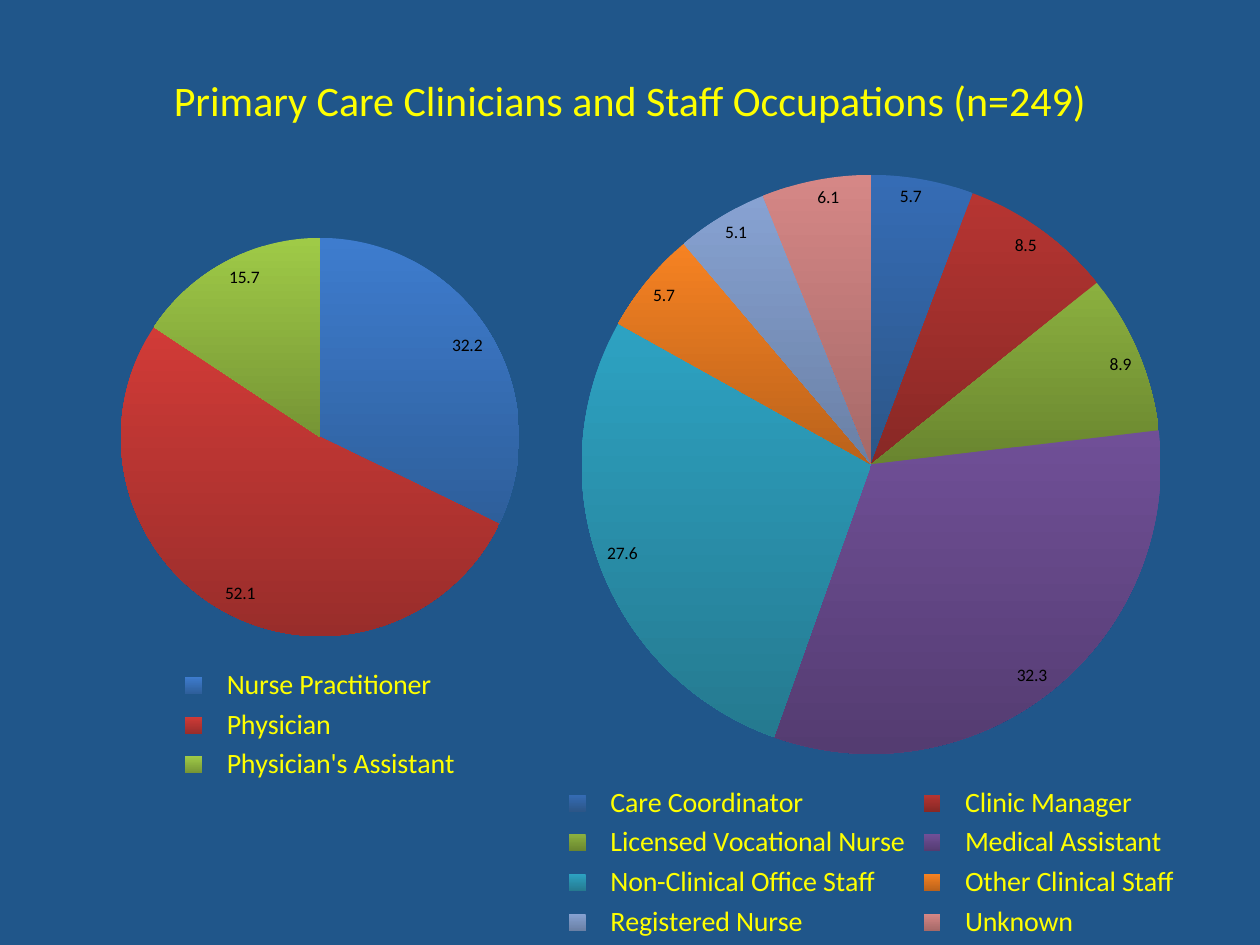
from pptx import Presentation
from pptx.chart.data import CategoryChartData
from pptx.dml.color import RGBColor
from pptx.enum import chart as charts, text
from pptx.util import Inches, Pt

FONT = "Calibri"
COLORS = {"background": "20568A", "accent": "FFFF00", "label": "000000"}
TITLE = "Primary Care Clinicians and Staff Occupations (n=249)"
LEGEND_GAP = " " * 3

PIES = [
    {
        "box": (0.5, 1.75, 4.08, 4.5),
        "slices": [
            ("Nurse Practitioner", 32.2, "3E7CCE", "2E5F9B"),
            ("Physician", 52.1, "D13B37", "992D2B"),
            ("Physician's Assistant", 15.7, "9FCA47", "769535"),
        ],
    },
    {
        "box": (4, 1.25, 5.83, 6.25),
        "slices": [
            ("Care Coordinator", 5.7, "356CB5", "2C5688"),
            ("Clinic Manager", 8.5, "B63532", "882825"),
            ("Licensed Vocational Nurse", 8.9, "8BB03F", "69852F"),
            ("Medical Assistant", 32.3, "704F97", "543C71"),
            ("Non-Clinical Office Staff", 27.6, "2DA2C2", "257A90"),
            ("Other Clinical Staff", 5.7, "F68222", "BA621B"),
            ("Registered Nurse", 5.1, "87A2D2", "6A80A5"),
            ("Unknown", 6.1, "D58786", "A66968"),
        ],
    },
]


def rgb(value):
    """Return the colour for a hex string."""
    return RGBColor.from_string(value)


def format_font(font, size, color):
    """Apply the slide's typeface with a size and colour."""
    font.name, font.size, font.bold = FONT, Pt(size), False
    font.color.rgb = rgb(color)


def write_text(shape, content, size, color, align):
    """Write one formatted paragraph into a shape."""
    frame = shape.text_frame
    frame.word_wrap = True
    frame.vertical_anchor = text.MSO_ANCHOR.MIDDLE
    paragraph = frame.paragraphs[0]
    paragraph.alignment = align
    run = paragraph.add_run()
    run.text = content
    format_font(run.font, size, color)


def add_pie(slide, box, slices):
    """Add a pie chart with gradient slices, value labels and a legend."""
    data = CategoryChartData(number_format="0.0")
    data.categories = [LEGEND_GAP + name for name, *_ in slices]
    data.add_series("Series 1", [value for _, value, *_ in slices])
    chart = slide.shapes.add_chart(
        charts.XL_CHART_TYPE.PIE, *map(Inches, box), data
    ).chart
    chart.has_title = False
    format_font(chart.font, 10, COLORS["label"])

    chart.has_legend = True
    chart.legend.position = charts.XL_LEGEND_POSITION.BOTTOM
    chart.legend.include_in_layout = False
    format_font(chart.legend.font, 16, COLORS["accent"])

    plot = chart.plots[0]
    plot.vary_by_categories = True
    plot.has_data_labels = True
    labels = plot.data_labels
    labels.show_value = True
    labels.position = charts.XL_LABEL_POSITION.INSIDE_END
    format_font(labels.font, 10, COLORS["label"])

    for index, (_, _, *shades) in enumerate(slices):
        slice_format = plot.series[0].points[index].format
        slice_format.line.fill.background()
        fill = slice_format.fill
        fill.gradient()
        fill.gradient_angle = 270
        for stop, shade in zip(fill.gradient_stops, shades):
            stop.color.rgb = rgb(shade)


def main():
    """Build and save the slide."""
    presentation = Presentation()
    presentation.slide_width, presentation.slide_height = Inches(10), Inches(7.5)
    slide = presentation.slides.add_slide(presentation.slide_layouts[5])
    slide.background.fill.solid()
    slide.background.fill.fore_color.rgb = rgb(COLORS["background"])

    title = slide.shapes.title
    title.left, title.top, title.width, title.height = map(
        Inches, (0.25, 0.17, 9.5, 1.25)
    )
    write_text(title, TITLE, size=24, color=COLORS["accent"],
               align=text.PP_ALIGN.CENTER)
    for pie in PIES:
        add_pie(slide, **pie)
    presentation.save("out.pptx")


if __name__ == "__main__":
    main()
